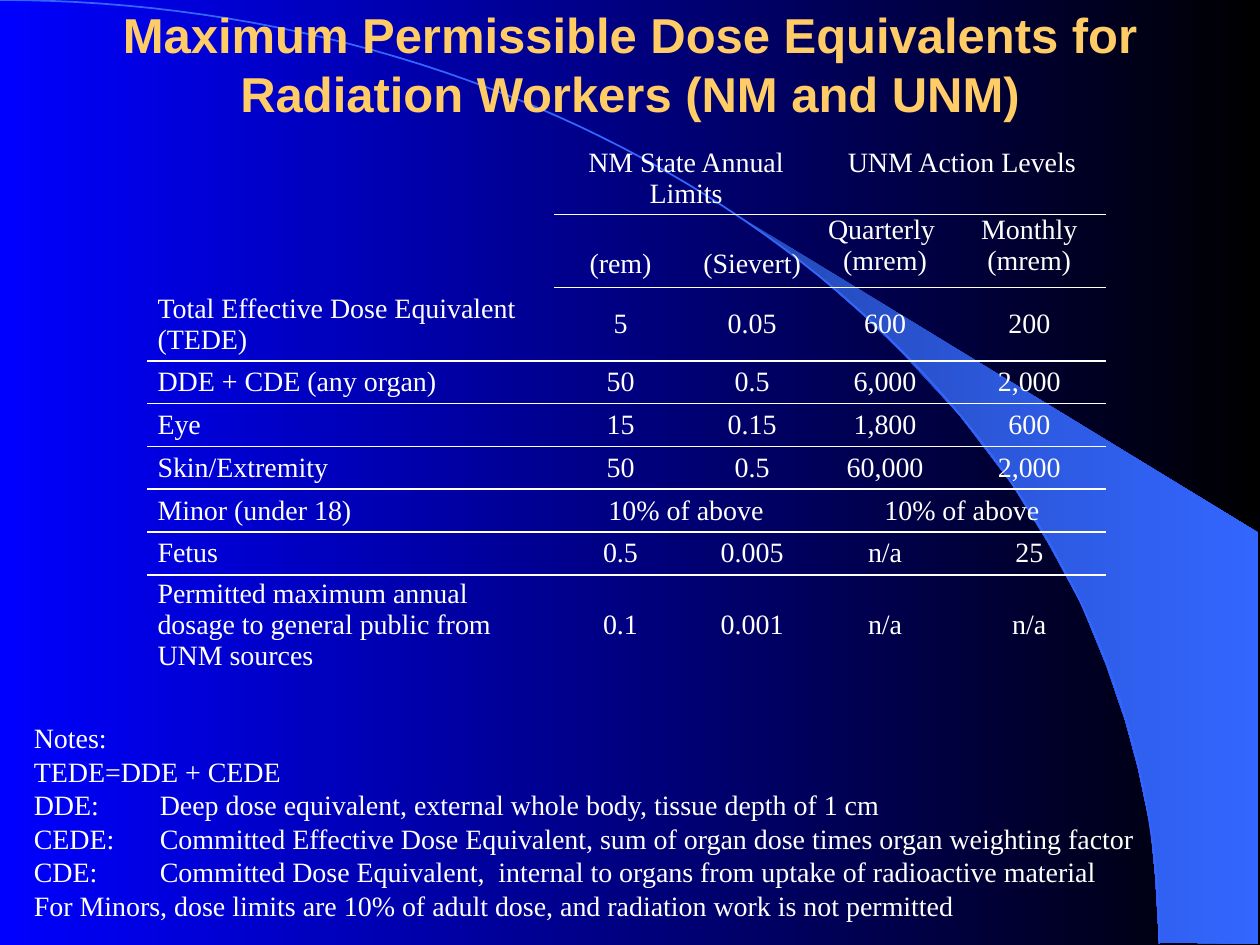
"""Build a slide of dose limits for radiation workers."""
import math

from lxml import etree
from pptx import Presentation
from pptx.dml.color import RGBColor
from pptx.enum.text import MSO_ANCHOR, MSO_AUTO_SIZE, PP_ALIGN
from pptx.oxml.ns import qn
from pptx.util import Pt

LEFT, MID = PP_ALIGN.LEFT, PP_ALIGN.CENTER
TOP, HALF = MSO_ANCHOR.TOP, MSO_ANCHOR.MIDDLE
GROW, FIXED = MSO_AUTO_SIZE.SHAPE_TO_FIT_TEXT, MSO_AUTO_SIZE.NONE

BLUE = RGBColor(0x00, 0x00, 0xFF)
BLACK = RGBColor(0x00, 0x00, 0x00)
NAVY = RGBColor(0x24, 0x49, 0xB6)
SKY = RGBColor(0x33, 0x66, 0xFF)
GOLD = RGBColor(0xFF, 0xCC, 0x66)
WHITE = RGBColor(0xFF, 0xFF, 0xFF)

HEAD = {"name": "Arial", "size": Pt(28), "bold": True}
BODY = {"name": "Times New Roman", "size": Pt(16), "bold": False}
NO_STYLE = "{2D5ABB26-0587-4C30-8999-92F81FD0307C}"


def style(frame, look, color, align, after=0):
    for para in frame.paragraphs:
        para.alignment = align
        para.space_before, para.space_after = Pt(0), Pt(after)
        for run in para.runs:
            for key, value in look.items():
                setattr(run.font, key, value)
            run.font.color.rgb = color
        for gap in para._p.findall(qn("a:br")):
            etree.SubElement(gap, qn("a:rPr"), sz=str(int(look["size"].pt * 100)))


def blend(fill, first, last):
    fill.gradient()
    fill.gradient_angle = 0
    for stop, color in zip(fill.gradient_stops, (first, last)):
        stop.color.rgb = color


deck = Presentation()
deck.slide_width, deck.slide_height = Pt(720), Pt(540)
slide = deck.slides.add_slide(deck.slide_layouts[5])
shapes = slide.shapes
blend(slide.background.fill, BLUE, BLACK)

wedge = [
    (662.4, 538.6), (719.3, 539.3), (719.3, 304.6), (424.1, 124.6),
    (449.3, 143.3), (470.2, 159.8), (493.2, 180), (515.5, 201.6),
    (548.6, 237.6), (578.2, 276.5), (599, 310.3), (617.8, 344.9),
    (632.2, 380.2), (643, 411.8), (650.2, 438.5), (657.4, 472.3),
    (660.2, 501.1),
]
turns = [math.pi / 2 * step / 72 for step in range(73)]
arc = [(662.4 * math.sin(turn), 539.3 * (1 - math.cos(turn))) for turn in turns]

forms = []
for points, close in ((wedge, True), (arc, False)):
    spots = [(Pt(x), Pt(y)) for x, y in points]
    pen = shapes.build_freeform(*spots[0])
    pen.add_line_segments(spots[1:], close=close)
    form = pen.convert_to_shape()
    form.shadow.inherit = False
    forms.append(form)
beam, curve = forms
blend(beam.fill, NAVY, SKY)
beam.line.fill.background()
curve.fill.background()
curve.line.color.rgb = SKY
curve.line.width = Pt(1)

title = shapes.title
shapes._spTree.append(title._element)
title.left, title.top, title.width, title.height = Pt(54), Pt(12.24), Pt(612), Pt(48.24)
title.text_frame.text = "Maximum Permissible Dose Equivalents for Radiation Workers (NM and UNM)"
title.text_frame.auto_size = FIXED
title.text_frame.word_wrap = True
title.text_frame.vertical_anchor = HALF
style(title.text_frame, HEAD, GOLD, MID)

notes = shapes.add_textbox(Pt(12.24), Pt(408.24), Pt(696.96), Pt(140.4)).text_frame
notes.word_wrap = True
notes.auto_size = GROW
notes.text = "\n".join([
    "Notes: \vTEDE=DDE + CEDE",
    "DDE: \tDeep dose equivalent, external whole body, tissue depth of 1 cm",
    "CEDE:\tCommitted Effective Dose Equivalent, sum of organ dose times organ weighting factor",
    "CDE:\tCommitted Dose Equivalent,  internal to organs from uptake of radioactive material",
    "For Minors, dose limits are 10% of adult dose, and radiation work is not permitted",
])
style(notes, BODY, WHITE, LEFT)

rows = [
    ["", "NM State Annual Limits", None, "UNM Action Levels", None],
    ["", "\v(rem)", "\v(Sievert)", "Quarterly \v(mrem)", "Monthly\v(mrem)"],
    ["Total Effective Dose Equivalent (TEDE)", "5", "0.05", "600", "200"],
    ["DDE + CDE (any organ)", "50", "0.5", "6,000", "2,000"],
    ["Eye", "15", "0.15", "1,800", "600"],
    ["Skin/Extremity", "50", "0.5", "60,000", "2,000"],
    ["Minor (under 18)", "10% of above", None, "10% of above", None],
    ["Fetus", "0.5", "0.005", "n/a", "25"],
    ["Permitted maximum annual dosage to general public from UNM sources",
     "0.1", "0.001", "n/a", "n/a"],
]
wide = [232.56, 75.6, 74.88, 77.04, 87.84]
tall = [38.16, 41.76, 41.76] + [24.48] * 5 + [57.6]

frame = shapes.add_table(len(rows), len(wide), Pt(84.24), Pt(84.24), Pt(sum(wide)), Pt(sum(tall)))
table = frame.table
table.first_row = table.horz_banding = False
table._tbl.tblPr.find(qn("a:tableStyleId")).text = NO_STYLE
for col, width in zip(table.columns, wide):
    col.width = Pt(width)
for row, height in zip(table.rows, tall):
    row.height = Pt(height)

for r, row in enumerate(rows):
    for c, text in enumerate(row):
        cell = table.cell(r, c)
        ruled = {
            "lnL": False,
            "lnR": False,
            "lnT": r > 0 and (c > 0 or r > 2),
            "lnB": r < len(rows) - 1 and (c > 0 or r > 1),
        }
        props = cell._tc.get_or_add_tcPr()
        for side, drawn in ruled.items():
            line = etree.SubElement(props, qn("a:" + side), w=str(Pt(1)))
            if drawn:
                paint = etree.SubElement(line, qn("a:solidFill"))
                etree.SubElement(paint, qn("a:srgbClr"), val=str(WHITE))
            else:
                etree.SubElement(line, qn("a:noFill"))
        cell.fill.background()
        cell.margin_left = cell.margin_right = Pt(5.76)
        cell.margin_top = cell.margin_bottom = Pt(0)
        cell.vertical_anchor = HALF if r > 1 else TOP
        if text is None:
            table.cell(r, c - 1).merge(cell)
        else:
            cell.text = text
            style(cell.text_frame, BODY, WHITE, MID if c else LEFT, 6)

deck.save("out.pptx")
